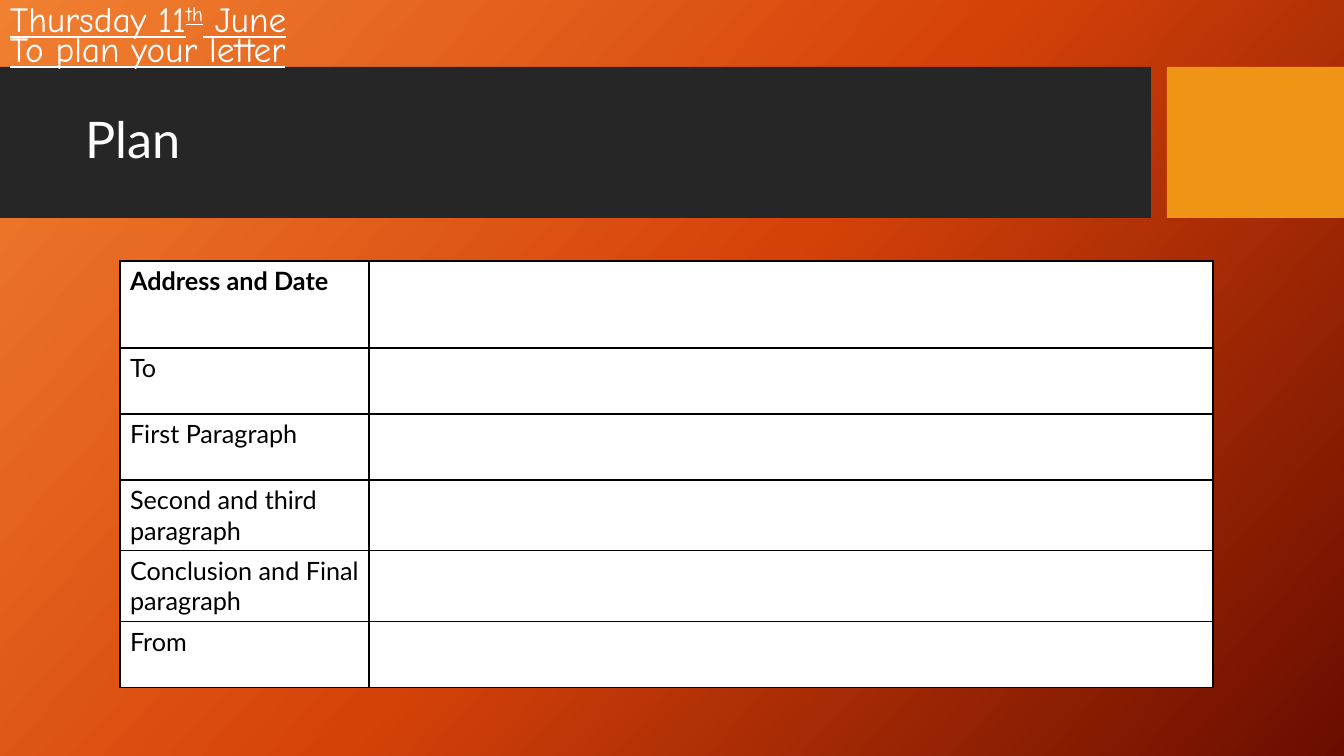
from dataclasses import dataclass

from lxml.etree import SubElement
from pptx import Presentation
from pptx.dml.color import RGBColor
from pptx.enum.shapes import MSO_SHAPE
from pptx.enum.text import MSO_ANCHOR, PP_ALIGN
from pptx.oxml import parse_xml
from pptx.oxml.ns import nsdecls, qn
from pptx.slide import Slide
from pptx.table import _Cell
from pptx.text.text import Font
from pptx.util import Emu, Pt

EMU_PER_INCH = 914400
PX_PER_INCH = 100.8
BLACK, WHITE = "000000", "FFFFFF"
GRADIENT = ((0, "F18031"), (50, "D54209"), (100, "6A0D00"))
GRADIENT_ANGLE = 42
COLUMN_WIDTHS = (249, 844)
FIRST_ROW_HEIGHT, ROW_HEIGHT = 87, 66
BORDER_WIDTH = 1


@dataclass(frozen=True)
class Box:
    left: int
    top: int
    width: int
    height: int

    def emu(self) -> tuple[Emu, Emu, Emu, Emu]:
        return px(self.left), px(self.top), px(self.width), px(self.height)


@dataclass(frozen=True)
class Bar:
    box: Box
    color: str


BARS = (
    Bar(Box(0, 67, 1151, 151), "262626"),
    Bar(Box(1167, 67, 177, 151), "F09415"),
)
TITLE_BOX = Box(75, 83, 1059, 119)
DATE_BOX = Box(0, 0, 1059, 77)
TABLE_LEFT, TABLE_TOP = 120, 261
PLAN_SECTIONS = (
    "Address and Date",
    "To",
    "First Paragraph",
    "Second and third\nparagraph",
    "Conclusion and Final paragraph",
    "From",
)


def px(length: int) -> Emu:
    return Emu(round(length * EMU_PER_INCH / PX_PER_INCH))


def rgb(color: str) -> RGBColor:
    return RGBColor.from_string(color)


def style_font(font: Font, name: str, size: float, color: str) -> None:
    font.name = name
    font.size = Pt(size)
    font.color.rgb = rgb(color)


def paint_background(slide: Slide) -> None:
    slide.background.fill.solid()
    properties = slide.element.find(f".//{qn('p:bgPr')}")
    stops = "".join(
        f'<a:gs pos="{position * 1000}"><a:srgbClr val="{color}"/></a:gs>'
        for position, color in GRADIENT
    )
    gradient = parse_xml(
        f'<a:gradFill {nsdecls("a")} rotWithShape="1"><a:gsLst>{stops}</a:gsLst>'
        f'<a:lin ang="{GRADIENT_ANGLE * 60000}" scaled="0"/></a:gradFill>'
    )
    properties.replace(properties.find(qn("a:solidFill")), gradient)


def add_bar(slide: Slide, bar: Bar) -> None:
    shape = slide.shapes.add_shape(MSO_SHAPE.RECTANGLE, *bar.box.emu())
    shape.shadow.inherit = False
    shape.fill.solid()
    shape.fill.fore_color.rgb = rgb(bar.color)
    shape.line.fill.background()


def set_title(slide: Slide) -> None:
    title = slide.shapes.title
    slide.shapes.element.append(title.element)
    title.left, title.top, title.width, title.height = TITLE_BOX.emu()
    title.text_frame.text = "Plan"
    title.text_frame.vertical_anchor = MSO_ANCHOR.MIDDLE
    paragraph = title.text_frame.paragraphs[0]
    paragraph.alignment = PP_ALIGN.LEFT
    paragraph.line_spacing = 0.9
    style_font(paragraph.runs[0].font, "Lato", 36, WHITE)


def set_borders(cell: _Cell) -> None:
    properties = cell._tc.get_or_add_tcPr()
    for index, side in enumerate(("lnL", "lnR", "lnT", "lnB")):
        line = SubElement(properties, qn(f"a:{side}"), w=str(Pt(BORDER_WIDTH)))
        fill = SubElement(line, qn("a:solidFill"))
        SubElement(fill, qn("a:srgbClr"), val=BLACK)
        properties.insert(index, line)


def add_plan_table(slide: Slide) -> None:
    heights = [FIRST_ROW_HEIGHT] + [ROW_HEIGHT] * (len(PLAN_SECTIONS) - 1)
    box = Box(TABLE_LEFT, TABLE_TOP, sum(COLUMN_WIDTHS), sum(heights))
    table = slide.shapes.add_table(len(heights), len(COLUMN_WIDTHS), *box.emu()).table
    table.first_row = False
    table.horz_banding = False
    for column, width in zip(table.columns, COLUMN_WIDTHS):
        column.width = px(width)
    for index, (row, height, section) in enumerate(zip(table.rows, heights, PLAN_SECTIONS)):
        row.height = px(height)
        row.cells[0].text_frame.text = section
        for paragraph in row.cells[0].text_frame.paragraphs:
            for run in paragraph.runs:
                style_font(run.font, "Lato", 18, BLACK)
                run.font.bold = index == 0
        for cell in row.cells:
            cell.fill.solid()
            cell.fill.fore_color.rgb = rgb(WHITE)
            set_borders(cell)


def add_date_and_aim(slide: Slide) -> None:
    text_frame = slide.shapes.add_textbox(*DATE_BOX.emu()).text_frame
    text_frame.word_wrap = True
    text_frame.vertical_anchor = MSO_ANCHOR.MIDDLE
    paragraph = text_frame.paragraphs[0]
    paragraph.line_spacing = 0.7
    for text in ("Thursday 11", "th", " June"):
        paragraph.add_run().text = text
    paragraph.add_line_break()
    paragraph.add_run().text = "To plan your letter"
    for run in paragraph.runs:
        style_font(run.font, "Comic Neue", 25.2, WHITE)
        run.font.underline = True
    ordinal = paragraph.runs[1]
    ordinal._r.get_or_add_rPr().set("baseline", "30000")


def main() -> None:
    presentation = Presentation()
    presentation.slide_width = px(1344)
    presentation.slide_height = px(756)
    slide = presentation.slides.add_slide(presentation.slide_layouts.get_by_name("Title Only"))
    paint_background(slide)
    for bar in BARS:
        add_bar(slide, bar)
    set_title(slide)
    add_plan_table(slide)
    add_date_and_aim(slide)
    presentation.save("out.pptx")


if __name__ == "__main__":
    main()
